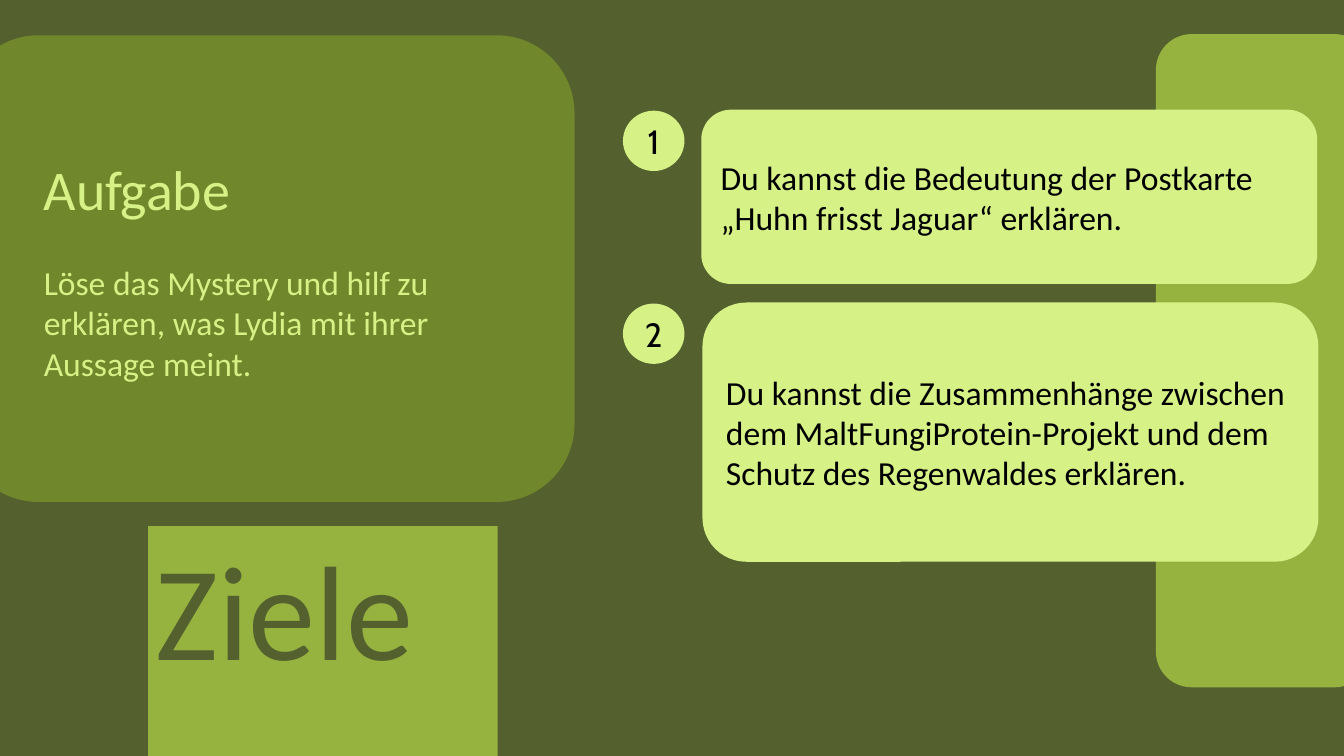
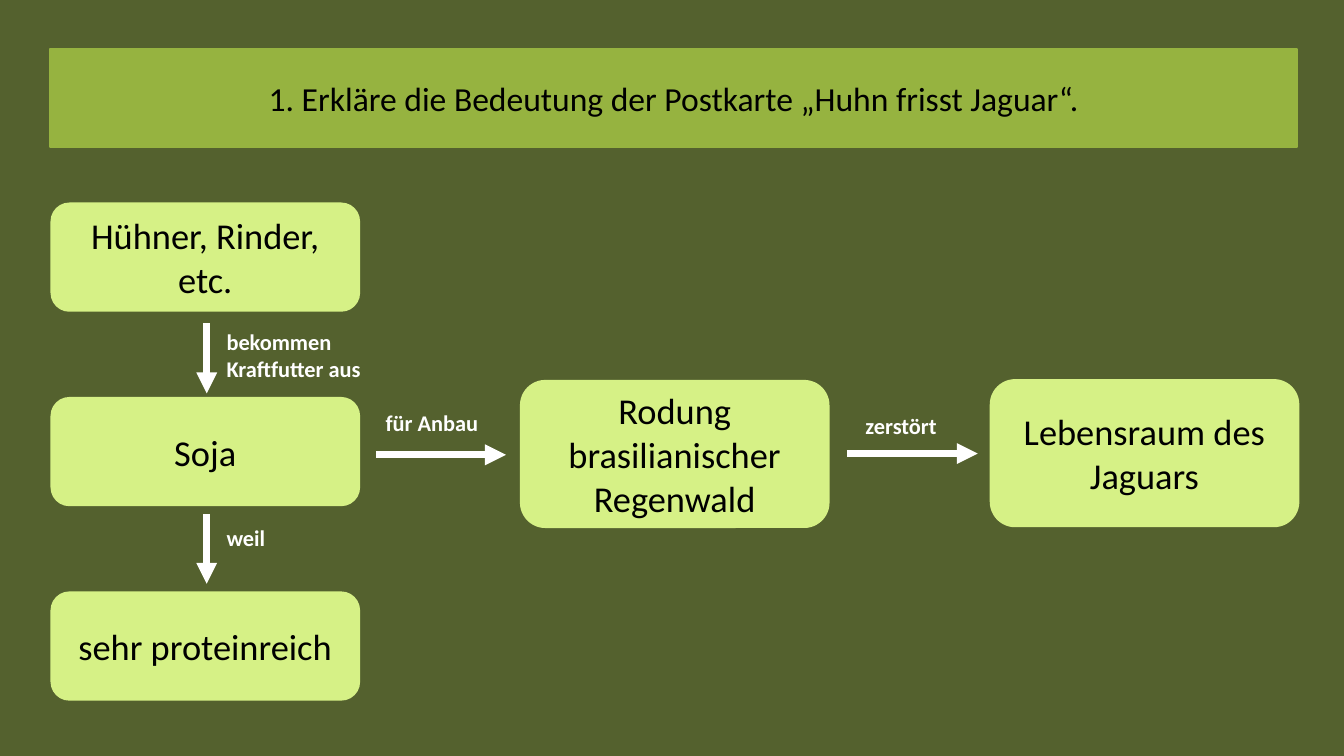
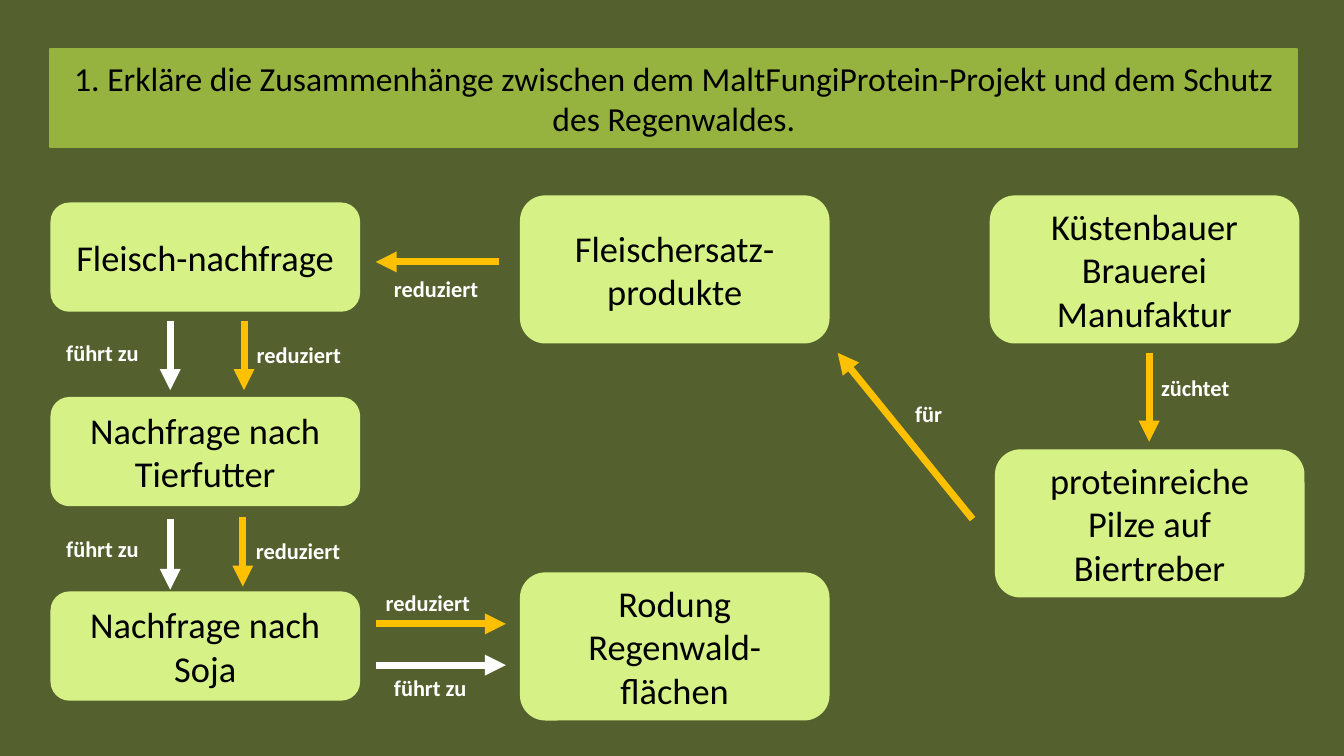
from lxml import etree
from pptx import Presentation
from pptx.dml.color import RGBColor
from pptx.enum.shapes import MSO_CONNECTOR, MSO_SHAPE
from pptx.enum.text import MSO_ANCHOR, MSO_AUTO_SIZE, PP_ALIGN
from pptx.oxml.ns import qn
from pptx.util import Cm, Pt

ROUND, OVAL = MSO_SHAPE.ROUNDED_RECTANGLE, MSO_SHAPE.OVAL
LINE = MSO_CONNECTOR.STRAIGHT
TOP, MID = MSO_ANCHOR.TOP, MSO_ANCHOR.MIDDLE
LEFT, CENTER = PP_ALIGN.LEFT, PP_ALIGN.CENTER
FIXED = MSO_AUTO_SIZE.NONE

DARK = RGBColor(0x54, 0x61, 0x2E)
OLIVE = RGBColor(0x70, 0x87, 0x2B)
GREEN = RGBColor(0x96, 0xB3, 0x40)
LIME = RGBColor(0xD6, 0xF1, 0x86)
BLACK = RGBColor(0, 0, 0)
WHITE = RGBColor(0xFF, 0xFF, 0xFF)
AMBER = RGBColor(0xFF, 0xC0, 0x00)

GOAL = {"size": Pt(24), "name": "Calibri"}
DIGIT = {"size": Pt(24), "name": "Cabin"}
NODE = {"size": Pt(26), "name": "Calibri"}
LABEL = {"size": Pt(16), "name": "Calibri", "bold": True}
HUGE = {"size": Pt(96), "name": "Calibri"}
HEAD = {"size": Pt(40), "name": "Calibri"}

BANNER = (1.27, 1.24, 31.42, 2.46)
COLS = [1.3, 13.13, 24.97]
ROWS = [5.13 + 4.9 * i for i in range(3)]
WIDE, LOW, HIGH = 7.75, 2.7, 3.68

TASK = [
    ("Aufgabe", HEAD, 0),
    ("Löse das Mystery und hilf zu erklären, was Lydia mit ihrer Aussage meint.", GOAL, 29),
]
GOALS = [
    ("Du kannst die Bedeutung der Postkarte „Huhn frisst Jaguar“ erklären.", 17.7, 2.79, 4.34),
    ("Du kannst die Zusammenhänge zwischen dem MaltFungiProtein-Projekt und dem "
     "Schutz des Regenwaldes erklären.", 17.73, 7.65, 6.48),
]
CHARTS = [
    {
        "title": "1. Erkläre die Bedeutung der Postkarte „Huhn frisst Jaguar“.",
        "chain": ["Hühner, Rinder, etc.", "Soja", "sehr proteinreich"],
        "nodes": [
            ("Rodung brasilianischer Regenwald", COLS[1], 9.6),
            ("Lebensraum des Jaguars", COLS[2], 9.58),
        ],
        "labels": [
            ("bekommen Kraftfutter aus", 5.46, 8.15, 4.95),
            ("weil", 5.46, 13.08, 2.01),
            ("für Anbau", 9.47, 10.19, 3.51),
            ("zerstört", 21.56, 10.26, 2.84),
        ],
        "arrows": {
            WHITE: [
                (5.21, 8.15, 5.21, 9.91),
                (5.21, 12.95, 5.21, 14.71),
                (9.47, 11.46, 12.75, 11.46),
                (21.34, 11.43, 24.64, 11.43),
            ],
        },
    },
    {
        "title": "1. Erkläre die Zusammenhänge zwischen dem MaltFungiProtein-Projekt "
                 "und dem Schutz des Regenwaldes.",
        "chain": ["Fleisch-nachfrage", "Nachfrage nach Tierfutter", "Nachfrage nach Soja"],
        "nodes": [
            ("Fleischersatz-produkte", COLS[1], 4.95),
            ("Küstenbauer Brauerei Manufaktur", COLS[2], 4.95),
            ("proteinreiche Pilze auf Biertreber", 25.1, 11.35),
            ("Rodung Regenwald-flächen", COLS[1], 14.45),
        ],
        "labels": [
            ("führt zu", 1.42, 8.43, 2.8),
            ("führt zu", 1.42, 13.36, 2.8),
            ("führt zu", 9.68, 16.87, 2.8),
            ("züchtet", 29.01, 9.3, 2.84),
            ("für", 22.81, 9.96, 1.7),
            ("reduziert", 9.68, 6.81, 3.1),
            ("reduziert", 6.22, 8.46, 3.1),
            ("reduziert", 6.2, 13.41, 3.1),
            ("reduziert", 9.47, 14.71, 3.1),
        ],
        "arrows": {
            WHITE: [
                (4.29, 8.08, 4.29, 9.83),
                (4.29, 13.08, 4.29, 14.86),
                (9.47, 16.76, 12.75, 16.76),
            ],
            AMBER: [
                (28.96, 8.89, 28.96, 11.13),
                (24.51, 13.08, 21.11, 8.89),
                (12.57, 6.6, 9.47, 6.6),
                (6.15, 8.08, 6.15, 9.83),
                (6.12, 13.03, 6.12, 14.78),
                (9.47, 15.72, 12.75, 15.72),
            ],
        },
    },
]


def apply(item, form):
    for key, value in form.items():
        setattr(item, key, value)


def lengths(box):
    return [Cm(v) for v in box]


def write(shape, parts, color, align=LEFT, anchor=MID):
    frame = shape.text_frame
    apply(frame, {"word_wrap": True, "auto_size": FIXED, "vertical_anchor": anchor})
    for i, (text, form, gap) in enumerate(parts):
        para = frame.add_paragraph() if i else frame.paragraphs[0]
        apply(para, {"alignment": align, "space_before": Pt(gap)})
        run = para.add_run()
        run.text = text
        apply(run.font, form)
        run.font.color.rgb = color


def paint(shape, fill, edge):
    shape.fill.solid()
    shape.fill.fore_color.rgb = fill
    if edge:
        shape.line.color.rgb = fill
        shape.line.width = Pt(1.5)
    else:
        shape.line.fill.background()


def block(slide, box, fill, kind=ROUND, edge=False):
    shape = slide.shapes.add_shape(kind, *lengths(box))
    shape.shadow.inherit = False
    paint(shape, fill, edge)
    return shape


def node(slide, text, x, y, high):
    shape = block(slide, (x, y, WIDE, high), LIME, edge=True)
    write(shape, [(text, NODE, 0)], BLACK, CENTER)


def label(slide, text, x, y, wide):
    shape = slide.shapes.add_textbox(*lengths((x, y, wide, 0.94)))
    write(shape, [(text, LABEL, 0)], WHITE, anchor=TOP)


def arrow(slide, ends, color):
    link = slide.shapes.add_connector(LINE, *lengths(ends))
    link.line.color.rgb = color
    link.line.width = Pt(5)
    etree.SubElement(link.line._get_or_add_ln(), qn("a:tailEnd"), type="triangle")
    etree.SubElement(link._element.spPr, qn("a:effectLst"))


def start(deck, text, box, form, color, align=CENTER, anchor=MID, edge=True):
    slide = deck.slides.add_slide(deck.slide_layouts[5])
    title = slide.shapes.title
    apply(title, dict(zip(("left", "top", "width", "height"), lengths(box))))
    etree.SubElement(title._element.spPr, qn("a:prstGeom"), prst="roundRect")
    paint(title, GREEN, edge)
    write(title, [(text, form, 0)], color, align, anchor)
    return slide


def goals(deck):
    slide = start(deck, "Ziele", (3.73, 13.26, 8.81, 10.08), HUGE, DARK, LEFT, TOP, False)
    apply(slide.shapes.title.text_frame, {"margin_left": Cm(0.18), "margin_top": Cm(0)})
    block(slide, (29.13, 0.86, 5.41, 16.46), GREEN)
    for i, (text, x, y, high) in enumerate(GOALS, 1):
        card = block(slide, (x, y, 15.47, high), LIME, edge=True)
        write(card, [(text, GOAL, 0)], BLACK)
        badge = block(slide, (15.7, y, 1.55, 1.52), LIME, OVAL)
        write(badge, [(str(i), DIGIT, 0)], BLACK, CENTER)
    task = block(slide, (-0.99, 0.89, 15.47, 11.76), OLIVE)
    write(task, TASK, LIME)
    task.text_frame.margin_left = Cm(1.52)


def chart(deck, data):
    slide = start(deck, data["title"], BANNER, GOAL, BLACK)
    for text, y in zip(data["chain"], ROWS):
        node(slide, text, COLS[0], y, LOW)
    for text, x, y in data["nodes"]:
        node(slide, text, x, y, HIGH)
    for item in data["labels"]:
        label(slide, *item)
    for color, links in data["arrows"].items():
        for ends in links:
            arrow(slide, ends, color)


def main():
    deck = Presentation()
    apply(deck, {"slide_width": Cm(33.87), "slide_height": Cm(19.05)})
    back = deck.slide_master.background.fill
    back.solid()
    back.fore_color.rgb = DARK
    goals(deck)
    for data in CHARTS:
        chart(deck, data)
    deck.save("out.pptx")


if __name__ == "__main__":
    main()
